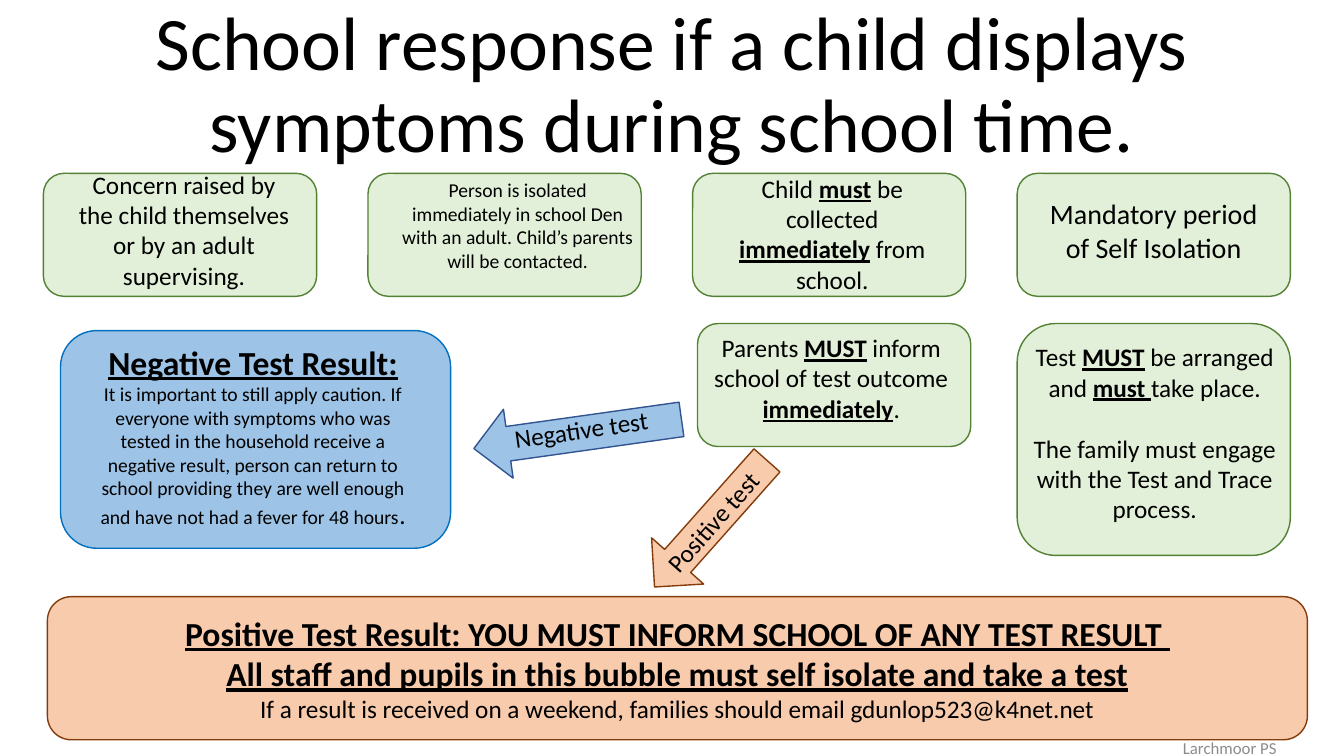
from dataclasses import dataclass

from pptx import Presentation
from pptx import util as u
from pptx.dml.color import RGBColor
from pptx.enum import shapes, text

BLACK = RGBColor(0x00, 0x00, 0x00)
GREY = RGBColor(0x8C, 0x8C, 0x8C)
GREEN, GREEN_EDGE = RGBColor(0xE2, 0xF0, 0xD9), RGBColor(0x54, 0x82, 0x35)
BLUE, BLUE_EDGE = RGBColor(0x9D, 0xC3, 0xE6), RGBColor(0x00, 0x70, 0xC0)
NAVY_EDGE = RGBColor(0x32, 0x54, 0x91)
PEACH, PEACH_EDGE = RGBColor(0xF8, 0xCB, 0xAD), RGBColor(0x84, 0x3C, 0x0B)

FONT = "Calibri"
WIDTH, HEIGHT = u.Inches(13.33), u.Inches(7.5)
ROUNDED = shapes.MSO_SHAPE.ROUNDED_RECTANGLE
ARROW = shapes.MSO_SHAPE.RIGHT_ARROW
CENTER, LEFT = text.PP_ALIGN.CENTER, text.PP_ALIGN.LEFT
TOP, MIDDLE, BOTTOM = (
    text.MSO_ANCHOR.TOP, text.MSO_ANCHOR.MIDDLE, text.MSO_ANCHOR.BOTTOM)

# Step cards: four columns, two rows, in percent of the slide
FIRST_COLUMN, COLUMN_PITCH, CARD_WIDTH = 3.23, 24.15, 20.33
ROW_TOPS = (22.93, 42.8)
CARD_HEIGHT, TALL_CARD_HEIGHT = 16.27, 30.67


@dataclass(frozen=True)
class Area:
    """A place on the slide, in percent of its width and height."""
    left: float
    top: float
    width: float
    height: float

    def emu(self) -> tuple[int, int, int, int]:
        return (round(WIDTH * self.left / 100), round(HEIGHT * self.top / 100),
                round(WIDTH * self.width / 100), round(HEIGHT * self.height / 100))


@dataclass(frozen=True)
class Run:
    words: str
    size: float
    strong: bool = False


@dataclass(frozen=True)
class Line:
    runs: tuple[Run, ...]
    before: float = 0


@dataclass(frozen=True)
class Panel:
    area: Area
    fill: RGBColor
    edge: RGBColor
    kind: shapes.MSO_SHAPE = ROUNDED
    rotation: float = 0


@dataclass(frozen=True)
class Note:
    area: Area
    lines: tuple[Line, ...]
    align: text.PP_ALIGN = CENTER
    anchor: text.MSO_ANCHOR = TOP
    color: RGBColor = BLACK
    rotation: float = 0


def line(words: str, size: float, before: float = 0) -> Line:
    """Split words at asterisks; every second part is bold and underlined."""
    parts = enumerate(words.split("*"))
    return Line(tuple(Run(part, size, i % 2 == 1) for i, part in parts if part), before)


def card(column: int, row: int, height: float = CARD_HEIGHT, shift: float = 0) -> Panel:
    left = FIRST_COLUMN + column * COLUMN_PITCH + shift
    return Panel(Area(left, ROW_TOPS[row], CARD_WIDTH, height), GREEN, GREEN_EDGE)


def write(frame, lines: tuple[Line, ...], *, align=CENTER, anchor=TOP,
          color=BLACK, spacing: float = 1.0) -> None:
    frame.word_wrap = True
    frame.auto_size = text.MSO_AUTO_SIZE.NONE
    frame.vertical_anchor = anchor
    for i, content in enumerate(lines):
        paragraph = frame.paragraphs[0] if i == 0 else frame.add_paragraph()
        paragraph.alignment = align
        paragraph.line_spacing = spacing
        paragraph.space_before = u.Pt(content.before)
        for part in content.runs:
            run = paragraph.add_run()
            run.text = part.words
            run.font.name = FONT
            run.font.size = u.Pt(part.size)
            run.font.bold = run.font.underline = part.strong
            run.font.color.rgb = color


def draw_panel(slide, panel: Panel):
    shape = slide.shapes.add_shape(panel.kind, *panel.area.emu())
    shape.shadow.inherit = False
    shape.fill.solid()
    shape.fill.fore_color.rgb = panel.fill
    shape.line.color.rgb = panel.edge
    shape.line.width = u.Pt(1)
    shape.rotation = panel.rotation
    return shape


def draw_note(slide, note: Note) -> None:
    box = slide.shapes.add_textbox(*note.area.emu())
    box.rotation = note.rotation
    write(box.text_frame, note.lines, align=note.align, anchor=note.anchor, color=note.color)


TITLE_AREA = Area(1.35, 1.07, 97.28, 21.87)
TITLE = line("School response if a child displays symptoms during school time.", 54)

PANELS = (
    *(card(column, 0) for column in range(4)),
    card(2, 1, shift=0.37),
    card(3, 1, TALL_CARD_HEIGHT),
    Panel(Area(4.5, 43.73, 29.03, 28.8), BLUE, BLUE_EDGE),
    Panel(Area(35.18, 52.8, 15.6, 9.2), BLUE, NAVY_EDGE, ARROW, 172),
    Panel(Area(46.58, 64.67, 12.6, 9.2), PEACH, PEACH_EDGE, ARROW, 131.6),
)

POSITIVE_PANEL = Panel(Area(3.53, 78.93, 93.75, 18.93), PEACH, PEACH_EDGE)
POSITIVE_RESULT = (
    line("*Positive Test Result: YOU MUST INFORM SCHOOL OF ANY TEST RESULT *", 24),
    line("*All staff and pupils in this bubble must self isolate and take a test*", 24),
    line("If a result is received on a weekend, families should email "
         "gdunlop523@k4net.net", 18),
)

NEGATIVE_RESULT = (
    line("*Negative Test Result:*", 24),
    Line((
        Run("It is important to still apply caution. If everyone with symptoms who was "
            "tested in the household receive a negative result, person can return to "
            "school providing they are well enough and have not had a fever for "
            "48 hours", 14),
        Run(".", 18),
    )),
)

NOTES = (
    Note(Area(5.1, 21.73, 17.18, 17.47), (
        line("Concern raised by the child themselves or by an adult supervising.", 18),)),
    Note(Area(29.18, 22.93, 18.68, 13.87), (
        line("Person is isolated immediately in school Den with an adult. "
             "Child’s parents will be contacted.", 14),)),
    Note(Area(53.33, 22.27, 17.18, 17.47), (
        line("Child *must* be collected *immediately* from school.", 18),)),
    Note(Area(77.25, 25.33, 17.18, 10.27), (
        line("Mandatory period of Self Isolation", 20),)),
    Note(Area(75.75, 44.53, 20.33, 25.6), (
        line("Test *MUST* be arranged and *must *take place.", 18),
        line("The family must engage with the Test and Trace process.", 18, before=22))),
    Note(Area(51.68, 43.33, 20.33, 13.47), (
        line("Parents *MUST* inform school of test outcome *immediately*.", 18),)),
    Note(Area(37.5, 53.87, 13.2, 5.33), (line("Negative test", 18),), LEFT, rotation=351.6),
    Note(Area(47.25, 64.67, 13.2, 5.33), (line("Positive test", 18),), LEFT, rotation=311.5),
    Note(Area(6.08, 44.53, 25.5, 30.53), NEGATIVE_RESULT),
    Note(Area(74.63, 96.27, 33.75, 5.33), (line("Larchmoor PS", 12),),
         anchor=MIDDLE, color=GREY),
)


def main() -> None:
    deck = Presentation()
    deck.slide_width, deck.slide_height = WIDTH, HEIGHT
    title_only = deck.slide_layouts[5]
    slide = deck.slides.add_slide(title_only)

    title = slide.shapes.title
    title.left, title.top, title.width, title.height = TITLE_AREA.emu()
    write(title.text_frame, (TITLE,), anchor=BOTTOM, spacing=0.9)

    for panel in PANELS:
        draw_panel(slide, panel)
    positive = draw_panel(slide, POSITIVE_PANEL)
    write(positive.text_frame, POSITIVE_RESULT, anchor=MIDDLE)
    for note in NOTES:
        draw_note(slide, note)

    deck.save("out.pptx")


if __name__ == "__main__":
    main()
